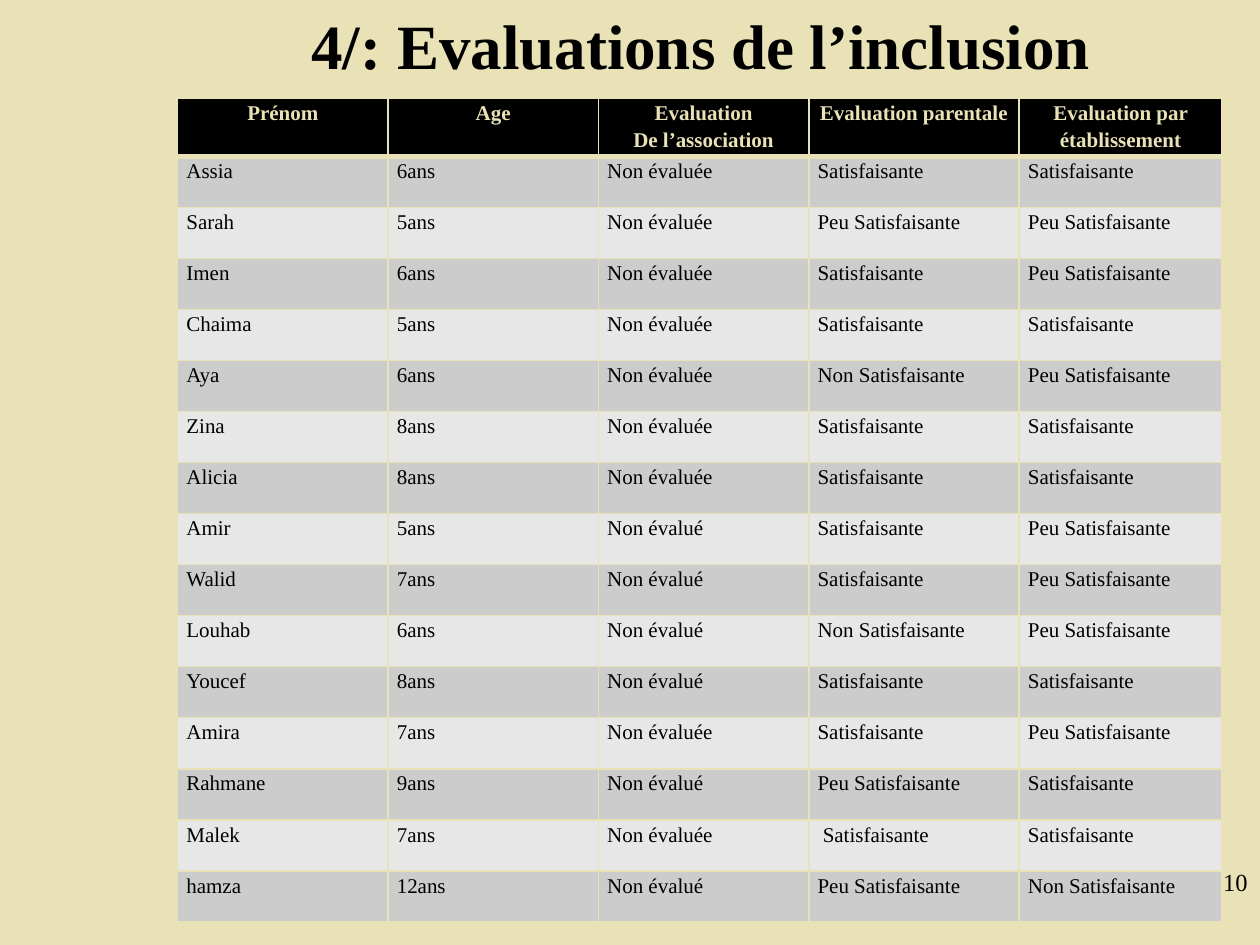
from pptx import Presentation
from pptx.util import Inches, Pt
from pptx.dml.color import RGBColor
from pptx.enum.text import PP_ALIGN, MSO_ANCHOR
from pptx.oxml import parse_xml
from pptx.oxml.ns import nsdecls

# Content
TITLE = "4/: Evaluations de l’inclusion "
NUMBER = "10"
HEAD = ("Prénom", "Age", "Evaluation\nDe l’association",
        "Evaluation parentale", "Evaluation par établissement")
ROWS = [
    ("Assia", "6ans", "Non évaluée", "Satisfaisante", "Satisfaisante"),
    ("Sarah", "5ans", "Non évaluée", "Peu Satisfaisante", "Peu Satisfaisante"),
    ("Imen", "6ans", "Non évaluée", "Satisfaisante", "Peu Satisfaisante"),
    ("Chaima", "5ans", "Non évaluée", "Satisfaisante", "Satisfaisante"),
    ("Aya", "6ans", "Non évaluée", "Non Satisfaisante", "Peu Satisfaisante"),
    ("Zina", "8ans", "Non évaluée", "Satisfaisante", "Satisfaisante"),
    ("Alicia", "8ans", "Non évaluée", "Satisfaisante", "Satisfaisante"),
    ("Amir", "5ans", "Non évalué", "Satisfaisante", "Peu Satisfaisante"),
    ("Walid", "7ans", "Non évalué", "Satisfaisante", "Peu Satisfaisante"),
    ("Louhab", "6ans", "Non évalué", "Non Satisfaisante", "Peu Satisfaisante"),
    ("Youcef", "8ans", "Non évalué", "Satisfaisante", "Satisfaisante"),
    ("Amira", "7ans", "Non évaluée", "Satisfaisante", "Peu Satisfaisante"),
    ("Rahmane", "9ans", "Non évalué", "Peu Satisfaisante", "Satisfaisante"),
    ("Malek", "7ans", "Non évaluée", " Satisfaisante", "Satisfaisante"),
    ("hamza", "12ans", "Non évalué", "Peu Satisfaisante", "Non Satisfaisante"),
]
COLORS = {"sand": "E9E2B6", "black": "000000", "dark": "CCCCCC", "light": "E7E7E7"}
FONT = "Times New Roman"
WIDTHS = (1.67, 1.67, 1.67, 1.67, 1.61)
HEIGHT, TOP_ROW = 6.5, 0.42


def write(frame, text, size=12, color="black", bold=False,
          align=PP_ALIGN.LEFT, space=1.0):
    frame.word_wrap = True
    for i, line in enumerate(text.split("\n")):
        par = frame.add_paragraph() if i else frame.paragraphs[0]
        par.alignment = align
        par.line_spacing = space
        run = par.add_run()
        run.text = line
        font = run.font
        font.name, font.size, font.bold = FONT, Pt(size), bold
        font.color.rgb = RGBColor.from_string(COLORS[color])


def add_box(left, top, width, height):
    box = slide.shapes.add_textbox(*map(Inches, (left, top, width, height)))
    return box.text_frame


def style(cell, fill, below=1):
    """Set the margins, borders and fill of a cell."""
    cell.margin_left = cell.margin_right = Inches(0.07)
    cell.margin_top = cell.margin_bottom = 0
    props = cell._tc.get_or_add_tcPr()
    for side, wide in (("L", 1), ("R", 1), ("T", 1), ("B", below)):
        props.append(parse_xml(
            f'<a:ln{side} {nsdecls("a")} w="{Pt(wide)}"><a:solidFill>'
            f'<a:srgbClr val="{COLORS["sand"]}"/></a:solidFill></a:ln{side}>'))
    cell.fill.solid()
    cell.fill.fore_color.rgb = RGBColor.from_string(COLORS[fill])


# Slide
prs = Presentation()
prs.slide_width, prs.slide_height = Inches(10), Inches(7.5)
slide = prs.slides.add_slide(prs.slide_layouts[6])
back = slide.background.fill
back.solid()
back.fore_color.rgb = RGBColor.from_string(COLORS["sand"])

# Title
frame = add_box(1.5, 0, 8.25, 0.7)
frame.vertical_anchor = MSO_ANCHOR.MIDDLE
write(frame, TITLE, size=36, bold=True, align=PP_ALIGN.CENTER)

# Table
table = slide.shapes.add_table(
    len(ROWS) + 1, len(HEAD), Inches(1.41), Inches(0.78),
    Inches(sum(WIDTHS)), Inches(HEIGHT)).table
for col, width in zip(table.columns, WIDTHS):
    col.width = Inches(width)
for r, row in enumerate([HEAD] + ROWS):
    table.rows[r].height = Inches((HEIGHT - TOP_ROW) / len(ROWS) if r else TOP_ROW)
    for c, text in enumerate(row):
        cell = table.cell(r, c)
        if r:
            style(cell, "dark" if r % 2 else "light")
            write(cell.text_frame, text, space=1.15)
        else:
            style(cell, "black", below=3)
            write(cell.text_frame, text, color="sand", bold=True,
                  align=PP_ALIGN.CENTER, space=1.15)

# Slide number
write(add_box(7.92, 6.83, 2.08, 0.5), NUMBER, size=14, align=PP_ALIGN.RIGHT)

prs.save("out.pptx")
